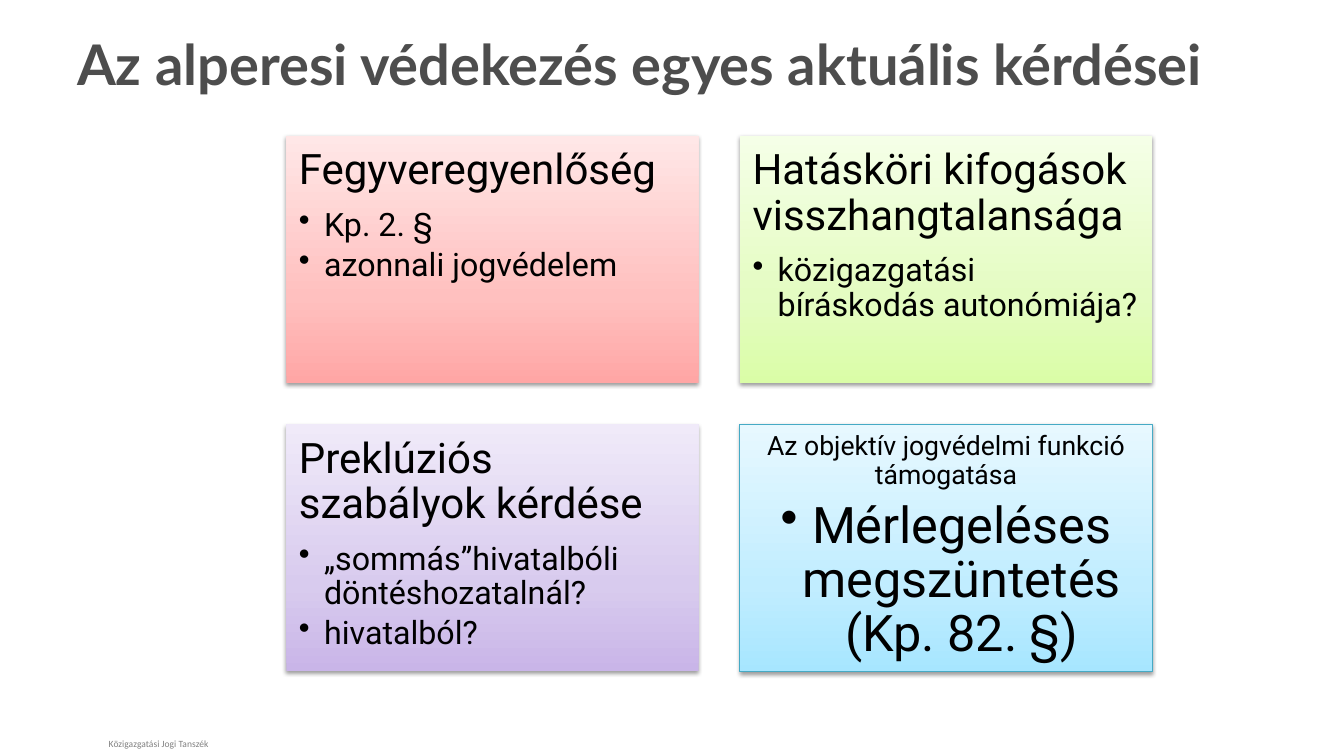
from copy import deepcopy
from dataclasses import dataclass

from lxml import etree
from pptx import Presentation
from pptx.dml.color import RGBColor
from pptx.enum.shapes import MSO_SHAPE
from pptx.enum.text import MSO_ANCHOR, MSO_AUTO_SIZE, PP_ALIGN
from pptx.oxml.ns import qn
from pptx.util import Pt

RECT = MSO_SHAPE.RECTANGLE
TOP, MIDDLE = MSO_ANCHOR.TOP, MSO_ANCHOR.MIDDLE
LEFT, CENTER = PP_ALIGN.LEFT, PP_ALIGN.CENTER
FIT_SHAPE = MSO_AUTO_SIZE.SHAPE_TO_FIT_TEXT


@dataclass(frozen=True)
class Theme:
    title_font: str = "Lato"
    body_font: str = "Roboto"
    footer_font: str = "Calibri"
    title_size: float = 40
    footer_size: float = 6.8
    title_color: str = "4D4D4D"
    footer_color: str = "808080"
    text_color: str = "000000"
    shadow_color: str = "000000"
    red: tuple = ("FFA6A5", "FFC0BF", "FFE7E7")
    green: tuple = ("DAFDA7", "E4FCC2", "F5FFE7")
    purple: tuple = ("C9B5E8", "D8CBEE", "F0EAF9")
    blue: tuple = ("A7E6FF", "C1EDFF", "E7F8FF")
    blue_line: str = "46AAC5"


@dataclass(frozen=True)
class CardStyle:
    heading_size: float = 30
    bullet_size: float = 23
    indent: float = 18
    margin_x: float = 9
    margin_y: float = 9
    align: PP_ALIGN = LEFT
    anchor: MSO_ANCHOR = TOP


@dataclass(frozen=True)
class Card:
    heading: str
    bullets: tuple
    colors: tuple
    line: str = ""
    style: CardStyle = CardStyle()


THEME = Theme()
CENTERED = CardStyle(19, 36, 22.5, 10.8, 5.4, CENTER, MIDDLE)
GRID_LEFT, GRID_TOP = 204.5, 97.2
CARD_WIDTH, CARD_HEIGHT, GAP = 294.5, 176.4, 29.5
COLUMNS = 2
STOPS = (0, 0.35, 1)

CARDS = (
    Card("Fegyveregyenlőség", ("Kp. 2. §", "azonnali jogvédelem"), THEME.red),
    Card("Hatásköri kifogások visszhangtalansága",
         ("közigazgatási bíráskodás autonómiája?",), THEME.green),
    Card("Preklúziós szabályok kérdése",
         ("„sommás”hivatalbóli döntéshozatalnál?", "hivatalból?"), THEME.purple),
    Card("Az objektív jogvédelmi funkció támogatása",
         ("Mérlegeléses megszüntetés\n(Kp. 82. §)",), THEME.blue,
         THEME.blue_line, CENTERED),
)


def write(p, text: str, *, font: str, size: float, color: str,
          bold: bool = False, align: PP_ALIGN = LEFT) -> None:
    p.alignment = align
    for i, line in enumerate(text.split("\n")):
        if i:
            p.add_line_break()
        r = p.add_run()
        r.text = line
        r.font.name, r.font.size, r.font.bold = font, Pt(size), bold
        r.font.color.rgb = RGBColor.from_string(color)


def add_label(s, text: str, box: tuple, *, anchor: MSO_ANCHOR = TOP,
              grow: bool = False, **fmt) -> None:
    tf = s.shapes.add_textbox(*map(Pt, box)).text_frame
    tf.word_wrap = True
    tf.vertical_anchor = anchor
    if grow:
        tf.auto_size = FIT_SHAPE
    write(tf.paragraphs[0], text, **fmt)


def set_spacing(p, after: int) -> None:
    """Set tight lines and a space after in percent of the type size."""
    p.line_spacing = 0.9
    spacing = etree.SubElement(p._p.get_or_add_pPr(), qn("a:spcAft"))
    etree.SubElement(spacing, qn("a:spcPct"), val=str(after * 1000))


def set_bullet(p, indent: float) -> None:
    p.level = 1
    pPr = p._p.get_or_add_pPr()
    pPr.set("marL", str(Pt(indent)))
    pPr.set("indent", str(-Pt(indent)))
    etree.SubElement(pPr, qn("a:buChar"), char="•")


def set_gradient(sp, colors: tuple) -> None:
    """Fill from the bottom edge up with three colours."""
    sp.fill.gradient()
    sp.fill.gradient_angle = 90
    stops = sp._element.spPr.find(".//" + qn("a:gsLst"))
    stops.append(deepcopy(stops[0]))
    for stop, position, color in zip(sp.fill.gradient_stops, STOPS, colors):
        stop.position = position
        stop.color.rgb = RGBColor.from_string(color)


def set_shadow(sp) -> None:
    sp.shadow.inherit = False
    effects = sp._element.spPr.find(qn("a:effectLst"))
    shadow = etree.SubElement(effects, qn("a:outerShdw"), blurRad=str(Pt(3.1)),
                              dist=str(Pt(1.6)), dir="5400000", rotWithShape="0")
    color = etree.SubElement(shadow, qn("a:srgbClr"), val=THEME.shadow_color)
    etree.SubElement(color, qn("a:alpha"), val="38000")


def add_card(s, card: Card, left: float, top: float) -> None:
    style = card.style
    sp = s.shapes.add_shape(RECT, Pt(left), Pt(top), Pt(CARD_WIDTH), Pt(CARD_HEIGHT))
    set_gradient(sp, card.colors)
    if card.line:
        sp.line.color.rgb = RGBColor.from_string(card.line)
        sp.line.width = Pt(0.75)
    else:
        sp.line.fill.background()
    set_shadow(sp)

    tf = sp.text_frame
    tf.word_wrap = True
    tf.vertical_anchor = style.anchor
    tf.margin_left = tf.margin_right = Pt(style.margin_x)
    tf.margin_top = tf.margin_bottom = Pt(style.margin_y)
    fmt = dict(font=THEME.body_font, color=THEME.text_color, align=style.align)
    p = tf.paragraphs[0]
    set_spacing(p, 35)
    write(p, card.heading, size=style.heading_size, **fmt)
    for bullet in card.bullets:
        p = tf.add_paragraph()
        set_spacing(p, 15)
        set_bullet(p, style.indent)
        write(p, bullet, size=style.bullet_size, **fmt)


def main() -> None:
    prs = Presentation()
    prs.slide_width, prs.slide_height = Pt(960), Pt(540)
    s = prs.slides.add_slide(prs.slide_layouts[6])
    add_label(s, "Közigazgatási Jogi Tanszék", (70.6, 523.4, 131.8, 15.1), grow=True,
              font=THEME.footer_font, size=THEME.footer_size, color=THEME.footer_color)
    add_label(s, "Az alperesi védekezés egyes aktuális kérdései", (48, 0, 864, 90),
              anchor=MIDDLE, font=THEME.title_font, size=THEME.title_size,
              color=THEME.title_color, bold=True)
    for i, card in enumerate(CARDS):
        row, column = divmod(i, COLUMNS)
        add_card(s, card, GRID_LEFT + column * (CARD_WIDTH + GAP),
                 GRID_TOP + row * (CARD_HEIGHT + GAP))
    prs.save("out.pptx")


if __name__ == "__main__":
    main()
